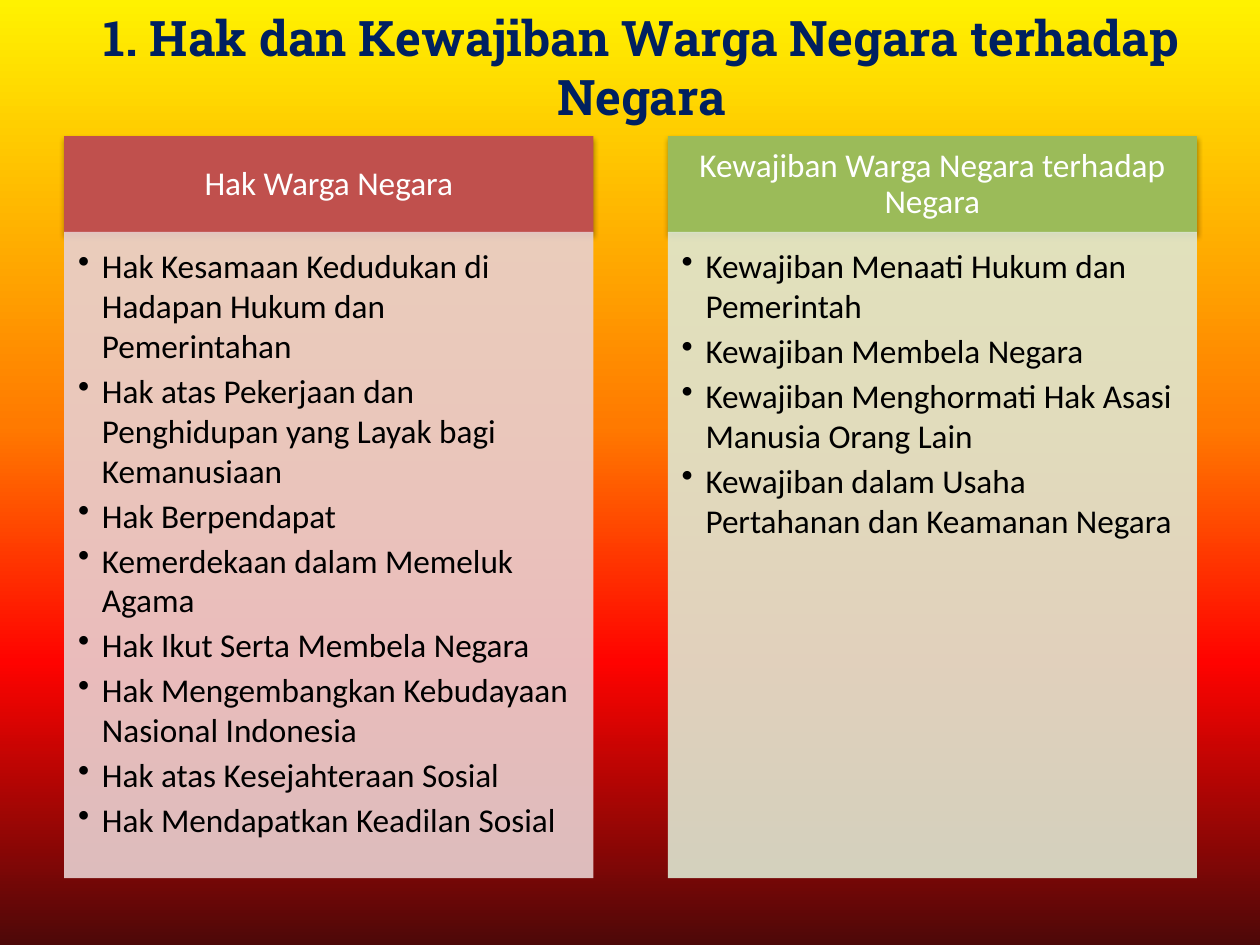
from dataclasses import dataclass

from pptx import Presentation
from pptx.dml.color import RGBColor
from pptx.enum.shapes import MSO_SHAPE
from pptx.enum.text import MSO_ANCHOR, MSO_AUTO_SIZE, PP_ALIGN
from pptx.oxml import parse_xml
from pptx.oxml.ns import nsdecls
from pptx.oxml.xmlchemy import OxmlElement
from pptx.util import Inches, Pt


@dataclass(frozen=True)
class Theme:
    head: str = "Roboto Slab"
    body: str = "Calibri"
    big: float = 28
    text: float = 19
    navy: str = "002060"
    white: str = "FFFFFF"
    black: str = "000000"
    stops: tuple = ((0, "FFF200"), (45, "FF7A00"), (70, "FF0300"), (100, "4D0808"))


class Deck:
    def __init__(self, theme):
        self.theme = theme
        self.file = Presentation()
        self.file.slide_width = Inches(10)
        self.file.slide_height = Inches(7.5)
        self.slide = self.file.slides.add_slide(self.file.slide_layouts[5])

    def backdrop(self):
        stops = "".join(
            f'<a:gs pos="{spot * 1000}"><a:srgbClr val="{tint}"/></a:gs>'
            for spot, tint in self.theme.stops
        )
        fill = self.slide.background.fill
        fill.gradient()
        fill.gradient_angle = 270
        old = self.slide.element.find(".//{*}bgPr/{*}gradFill/{*}gsLst")
        new = parse_xml(f'<a:gsLst {nsdecls("a")}>{stops}</a:gsLst>')
        old.getparent().replace(old, new)

    def style(self, para, face, size, tint, bold=False):
        for run in para.runs:
            run.font.name = face
            run.font.size = Pt(size)
            run.font.bold = bold
            run.font.color.rgb = RGBColor.from_string(tint)

    def title(self, text, left, top, width, height):
        shape = self.slide.shapes.title
        shape.left, shape.top = Inches(left), Inches(top)
        shape.width, shape.height = Inches(width), Inches(height)
        frame = shape.text_frame
        frame.text = text
        frame.word_wrap = True
        frame.auto_size = MSO_AUTO_SIZE.NONE
        frame.vertical_anchor = MSO_ANCHOR.MIDDLE
        para = frame.paragraphs[0]
        para.alignment = PP_ALIGN.CENTER
        self.style(para, self.theme.head, self.theme.big, self.theme.navy, True)

    def block(self, left, top, width, height, tint, pads):
        shape = self.slide.shapes.add_shape(
            MSO_SHAPE.RECTANGLE, Inches(left), Inches(top), Inches(width), Inches(height)
        )
        shape.shadow.inherit = False
        shape.fill.solid()
        shape.fill.fore_color.rgb = RGBColor.from_string(tint)
        shape.line.fill.background()
        frame = shape.text_frame
        frame.word_wrap = True
        (frame.margin_left, frame.margin_top,
         frame.margin_right, frame.margin_bottom) = map(Inches, pads)
        return shape

    def header(self, text, left, top, width, height, tint):
        shape = self.block(left, top, width, height, tint, (0.15, 0.08, 0.15, 0.08))
        shape.element.spPr.find("{*}effectLst").append(parse_xml(
            f'<a:outerShdw {nsdecls("a")} blurRad="{Pt(3.1)}" dist="{Pt(1.8)}" '
            'dir="5400000" rotWithShape="0"><a:srgbClr val="000000">'
            '<a:alpha val="35000"/></a:srgbClr></a:outerShdw>'
        ))
        frame = shape.text_frame
        frame.text = text
        frame.vertical_anchor = MSO_ANCHOR.MIDDLE
        para = frame.paragraphs[0]
        para.alignment = PP_ALIGN.CENTER
        para.line_spacing = 0.9
        self.style(para, self.theme.body, self.theme.text, self.theme.white)

    def bullets(self, items, left, top, width, height, tint):
        shape = self.block(left, top, width, height, tint, (0.11, 0.11, 0.15, 0.17))
        alpha = OxmlElement("a:alpha")
        alpha.set("val", "90000")
        shape.element.spPr.find("{*}solidFill/{*}srgbClr").append(alpha)
        frame = shape.text_frame
        frame.vertical_anchor = MSO_ANCHOR.TOP
        frame.text = "\n".join(items)
        for para in frame.paragraphs:
            para.alignment = PP_ALIGN.LEFT
            para.level = 1
            para.space_after = Pt(2.85)
            props = para._p.get_or_add_pPr()
            props.set("marL", str(Inches(0.19)))
            props.set("indent", str(-Inches(0.19)))
            mark = OxmlElement("a:buChar")
            mark.set("char", "•")
            props.append(mark)
            self.style(para, self.theme.body, self.theme.text, self.theme.black)


def main():
    deck = Deck(Theme())
    deck.backdrop()
    deck.title("1. Hak dan Kewajiban Warga Negara terhadap Negara", 0.59, -0.1, 9, 1.25)
    rights = [
        "Hak Kesamaan Kedudukan di Hadapan Hukum dan Pemerintahan",
        "Hak atas Pekerjaan dan Penghidupan yang Layak bagi Kemanusiaan",
        "Hak Berpendapat",
        "Kemerdekaan dalam Memeluk Agama",
        "Hak Ikut Serta Membela Negara",
        "Hak Mengembangkan Kebudayaan Nasional Indonesia",
        "Hak atas Kesejahteraan Sosial",
        "Hak Mendapatkan Keadilan Sosial",
    ]
    duties = [
        "Kewajiban Menaati Hukum dan Pemerintah",
        "Kewajiban Membela Negara",
        "Kewajiban Menghormati Hak Asasi Manusia Orang Lain",
        "Kewajiban dalam Usaha Pertahanan dan Keamanan Negara",
    ]
    columns = [
        ("Hak Warga Negara", rights, "C0504D", "E8D0D0"),
        ("Kewajiban Warga Negara terhadap Negara", duties, "9BBB59", "DEE7D1"),
    ]
    width, step = 4.2, 4.79
    for index, (name, items, dark, pale) in enumerate(columns):
        left = 0.51 + index * step
        deck.header(name, left, 1.08, width, 0.77, dark)
        deck.bullets(items, left, 1.84, width, 5.13, pale)
    deck.file.save("out.pptx")


if __name__ == "__main__":
    main()
